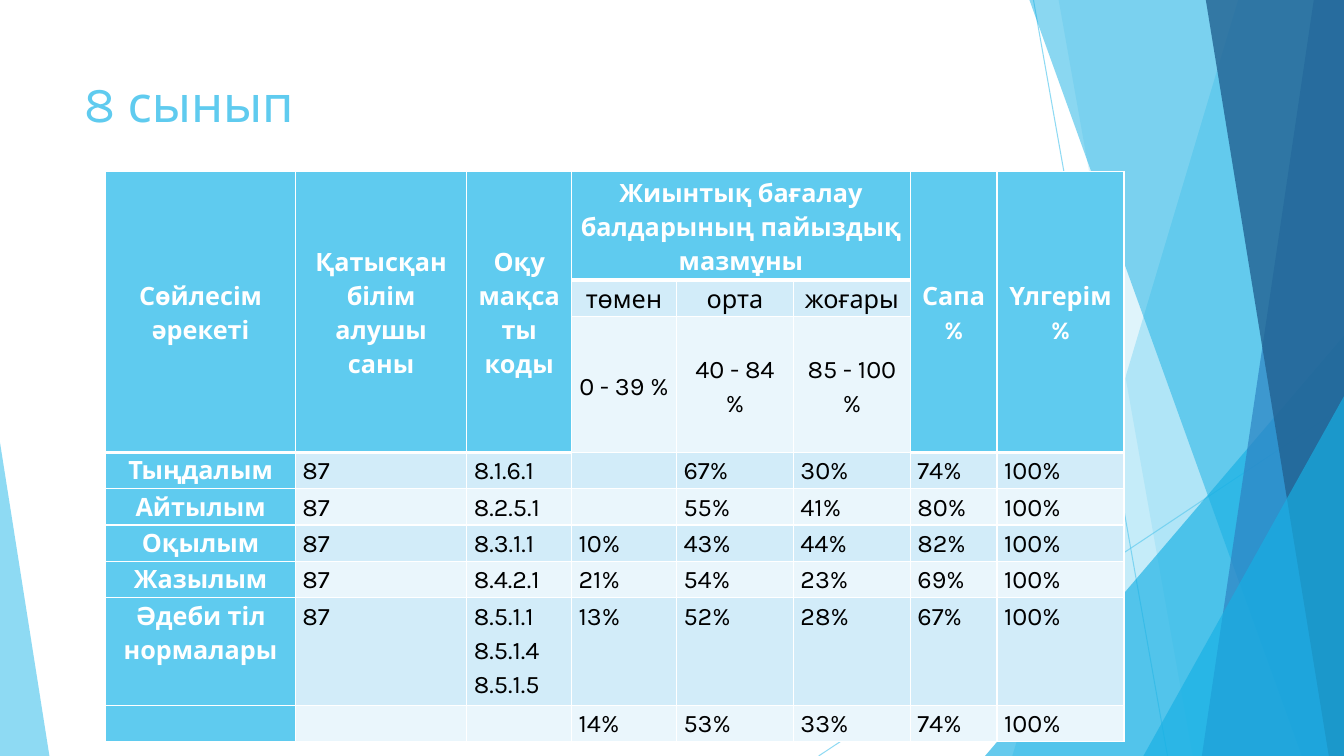
from lxml import etree
from pptx import Presentation
from pptx.dml.color import RGBColor
from pptx.enum.shapes import MSO_CONNECTOR, MSO_SHAPE
from pptx.enum.text import MSO_ANCHOR, PP_ALIGN
from pptx.oxml.ns import qn
from pptx.util import Inches, Pt

STRAIGHT, TRIANGLE = MSO_CONNECTOR.STRAIGHT, MSO_SHAPE.ISOSCELES_TRIANGLE
LEFT, CENTER = PP_ALIGN.LEFT, PP_ALIGN.CENTER
TOP, MIDDLE = MSO_ANCHOR.TOP, MSO_ANCHOR.MIDDLE

SKY = RGBColor(0x5F, 0xCB, 0xEF)
CYAN = RGBColor(0x17, 0xB0, 0xE4)
BLUE = RGBColor(0x2E, 0x83, 0xC3)
NAVY = RGBColor(0x22, 0x62, 0x92)
BAND_DARK = RGBColor(0xD2, 0xEC, 0xF9)
BAND_LIGHT = RGBColor(0xEA, 0xF6, 0xFC)
WHITE = RGBColor(0xFF, 0xFF, 0xFF)
BLACK = RGBColor(0, 0, 0)
FONT = "Karla"
WIDTH, HEIGHT = 13.33, 7.5

# Content
TITLE = "8 сынып"
ROWS = [
    ["Сөйлесім әрекеті", "Қатысқан білім алушы саны", "Оқу мақсаты коды",
     "Жиынтық бағалау балдарының пайыздық мазмұны", "", "", "Сапа %", "Үлгерім %"],
    ["", "", "", "төмен", "орта", "жоғары", "", ""],
    ["", "", "", "0 - 39 %", "40 - 84 %", "85 - 100 %", "", ""],
    ["Тыңдалым", "87", "8.1.6.1", "", "67%", "30%", "74%", "100%"],
    ["Айтылым", "87", "8.2.5.1", "", "55%", "41%", "80%", "100%"],
    ["Оқылым", "87", "8.3.1.1", "10%", "43%", "44%", "82%", "100%"],
    ["Жазылым", "87", "8.4.2.1", "21%", "54%", "23%", "69%", "100%"],
    ["Әдеби тіл нормалары", "87", "8.5.1.1 8.5.1.4 8.5.1.5",
     "13%", "52%", "28%", "67%", "100%"],
    ["", "", "", "14%", "53%", "33%", "74%", "100%"],
]
COL_WIDTHS = [1.88, 1.7, 1.04, 1.04, 1.16, 1.16, 0.86, 1.26]
ROW_HEIGHTS = [1.08, 0.36, 0.71, 0.36, 0.36, 0.36, 0.36, 1.07, 0.36]
HEAD_ROWS = 3
SCORE_COLS = (3, 4, 5)

# Decoration: lines (x1, y1, x2, y2); the rest end with colour and opacity %
LINES = [(10.25, 0, 11.58, HEIGHT), (WIDTH, 4.03, 8.12, HEIGHT)]
PANELS = [  # left edge at top, left edge at bottom; None marks a triangle
    (12.28, 10.04, SKY, 36),
    (10.5, 11.83, SKY, 20),
    (None, (9.77, 3.33, 3.56, 4.17, 1), CYAN, 66),
    (10.21, 12.91, CYAN, 50),
    (13.03, 11.92, BLUE, 70),
    (11.96, 13.18, NAVY, 80),
    (None, (11.34, 3.93, 1.99, 3.57, 1), CYAN, 66),
    (None, (0, 4.39, 0.49, 3.11, 0), SKY, 70),
]


def write(tf, text, size=18, color=BLACK, bold=False, align=LEFT, spacing=None):
    p = tf.paragraphs[0]
    p.alignment = align
    p.line_spacing = spacing
    if text:
        r = p.add_run()
        r.text = text
        r.font.name, r.font.size, r.font.bold = FONT, Pt(size), bold
        r.font.color.rgb = color


def set_opacity(element, percent):
    for clr in element.spPr.iter(qn("a:srgbClr")):
        etree.SubElement(clr, qn("a:alpha"), val=str(percent * 1000))


def set_borders(cell, bottom):
    tc_pr = cell._tc.get_or_add_tcPr()
    for i, (side, width) in enumerate(zip("LRTB", (1, 1, 1, bottom))):
        ln = etree.Element(qn(f"a:ln{side}"), w=str(Pt(width)))
        fill = etree.SubElement(ln, qn("a:solidFill"))
        etree.SubElement(fill, qn("a:srgbClr"), val=str(WHITE))
        tc_pr.insert(i, ln)


def add_decoration(shapes):
    for line in LINES:
        cx = shapes.add_connector(STRAIGHT, *map(Inches, line))
        cx.line.color.rgb = SKY
        cx.line.width = Pt(0.75)
        set_opacity(cx._element, 70)
        etree.SubElement(cx._element.spPr, qn("a:effectLst"))
    for top_x, base, color, opacity in PANELS:
        if top_x is None:
            *box, apex = base
            sp = shapes.add_shape(TRIANGLE, *map(Inches, box))
            sp.adjustments[0] = apex
        else:
            corners = [(WIDTH, 0), (WIDTH, HEIGHT), (base, HEIGHT)]
            fb = shapes.build_freeform(Inches(top_x), 0)
            fb.add_line_segments([(Inches(x), Inches(y)) for x, y in corners])
            sp = fb.convert_to_shape()
        sp.shadow.inherit = False
        sp.fill.solid()
        sp.fill.fore_color.rgb = color
        sp.line.fill.background()
        set_opacity(sp._element, opacity)


def add_scores(shapes):
    frame = shapes.add_table(len(ROWS), len(COL_WIDTHS), Inches(1.05), Inches(1.7),
                             Inches(sum(COL_WIDTHS)), Inches(sum(ROW_HEIGHTS)))
    table = frame.table
    for col, width in zip(table.columns, COL_WIDTHS):
        col.width = Inches(width)
    for row, height in zip(table.rows, ROW_HEIGHTS):
        row.height = Inches(height)

    # Merged heading cells
    for c in range(len(COL_WIDTHS)):
        if c not in SCORE_COLS:
            table.cell(0, c).merge(table.cell(HEAD_ROWS - 1, c))
    table.cell(0, SCORE_COLS[0]).merge(table.cell(0, SCORE_COLS[-1]))

    for r, texts in enumerate(ROWS):
        for c, text in enumerate(texts):
            cell = table.cell(r, c)
            in_head = r < HEAD_ROWS
            heading = r == 0 or (in_head and c not in SCORE_COLS)
            strong = heading or c == 0
            cell.margin_left = cell.margin_right = Inches(0.07)
            cell.margin_top = cell.margin_bottom = 0
            cell.vertical_anchor = MIDDLE if in_head else TOP
            cell.fill.solid()
            band = BAND_DARK if r % 2 else BAND_LIGHT
            cell.fill.fore_color.rgb = SKY if strong else band
            set_borders(cell, bottom=3 if heading else 1)
            write(cell.text_frame, text, color=WHITE if strong else BLACK, bold=strong,
                  align=CENTER if in_head or c == 0 else LEFT, spacing=1.15)


def main():
    prs = Presentation()
    prs.slide_width, prs.slide_height = Inches(WIDTH), Inches(HEIGHT)
    s = prs.slides.add_slide(prs.slide_layouts[5])
    add_decoration(s.shapes)

    # Title
    title = s.shapes.title
    title.left, title.top = Inches(0.74), Inches(0.67)
    title.width, title.height = Inches(9.4), Inches(1.44)
    title.text_frame.vertical_anchor = TOP
    write(title.text_frame, TITLE, size=36, color=SKY)

    add_scores(s.shapes)
    prs.save("out.pptx")


if __name__ == "__main__":
    main()
